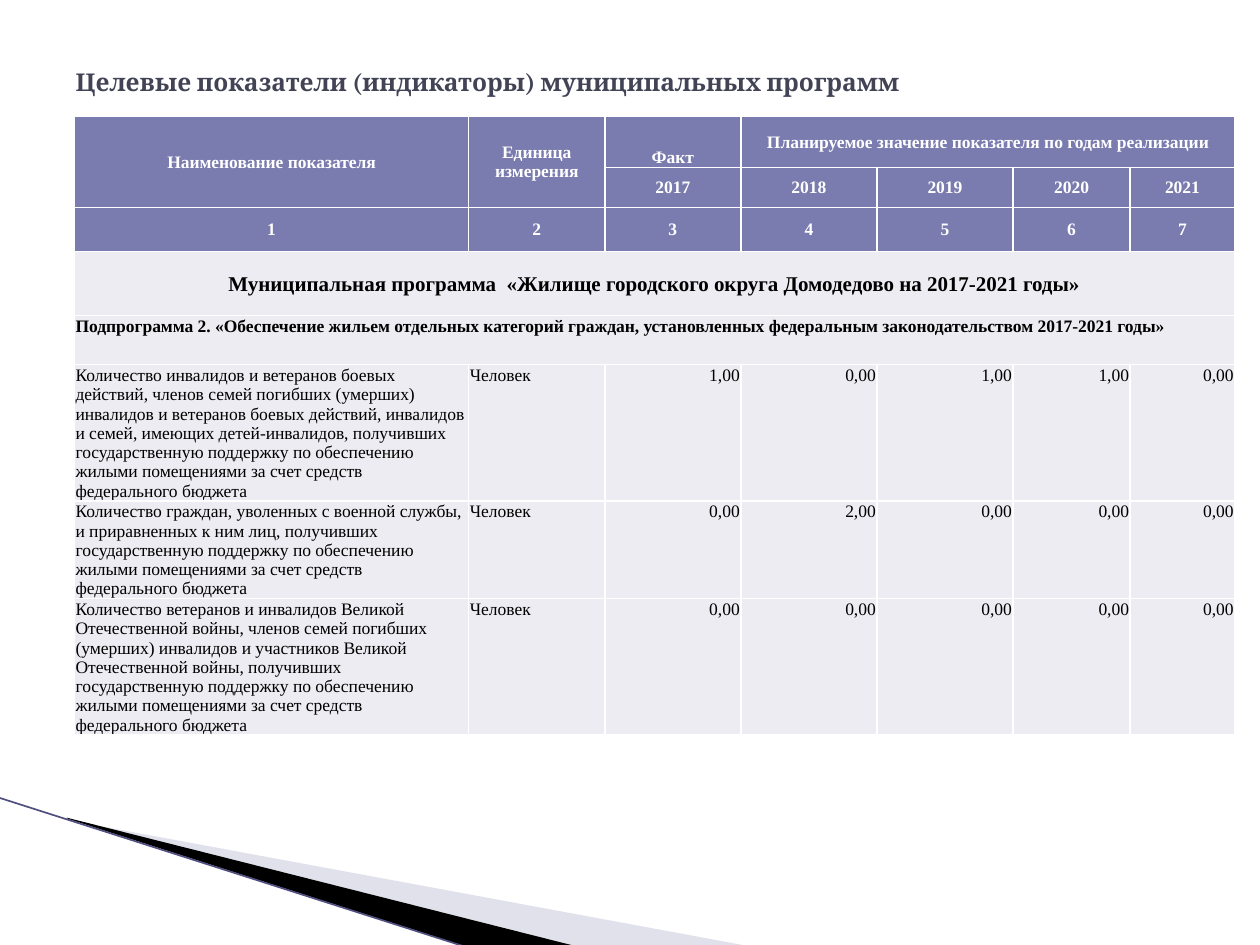
from lxml import etree
from pptx import Presentation
from pptx.dml.color import RGBColor
from pptx.enum.shapes import MSO_CONNECTOR
from pptx.enum.text import MSO_ANCHOR, PP_ALIGN
from pptx.oxml.ns import qn
from pptx.util import Pt

LEFT, MID, RIGHT = PP_ALIGN.LEFT, PP_ALIGN.CENTER, PP_ALIGN.RIGHT
TOP, CENTER, BOTTOM = MSO_ANCHOR.TOP, MSO_ANCHOR.MIDDLE, MSO_ANCHOR.BOTTOM
STRAIGHT = MSO_CONNECTOR.STRAIGHT

COLORS = {
    "title": "424456", "head": "7A7BAE", "body": "ECECF2", "white": "FFFFFF",
    "black": "000000", "wedge": "B6B6D1", "edge": "504F80",
}
SERIF = "Times New Roman"

COLS = [225.36, 77.76, 77.76, 77.76, 77.76, 66.96, 59.76]
ROWS = [29.5, 20.9, 25.2, 36.7, 28.1, 18.7, 29.5, 29.5]
HEADS = 3
AID = ("получивших государственную поддержку по обеспечению жилыми "
       "помещениями за счет средств федерального бюджета")
UNIT = "Человек"
DATA = [
    ["Наименование показателя", "Единица измерения", "Факт",
     "Планируемое значение показателя по годам реализации", "", "", ""],
    ["", "", "2017", "2018", "2019", "2020", "2021"],
    ["1", "2", "3", "4", "5", "6", "7"],
    ["Муниципальная программа  «Жилище городского округа Домодедово "
     "на 2017-2021 годы»"] + [""] * 6,
    ["Подпрограмма 2. «Обеспечение жильем отдельных категорий граждан, "
     "установленных федеральным законодательством 2017-2021 годы»"] + [""] * 6,
    ["Количество инвалидов и ветеранов боевых действий, членов семей погибших "
     "(умерших) инвалидов и ветеранов боевых действий, инвалидов и семей, "
     "имеющих детей-инвалидов, " + AID,
     UNIT, "1,00", "0,00", "1,00", "1,00", "0,00"],
    ["Количество граждан, уволенных с военной службы, и приравненных к ним "
     "лиц, " + AID, UNIT, "0,00", "2,00", "0,00", "0,00", "0,00"],
    ["Количество ветеранов и инвалидов Великой Отечественной войны, членов "
     "семей погибших (умерших) инвалидов и участников Великой Отечественной "
     "войны, " + AID, UNIT, "0,00", "0,00", "0,00", "0,00", "0,00"],
]
# First and last cell of each merged area
SPANS = [((0, 0), (1, 0)), ((0, 1), (1, 1)), ((0, 3), (0, 6)),
         ((3, 0), (3, 6)), ((4, 0), (4, 6))]


def rgb(name):
    return RGBColor.from_string(COLORS[name])


def style(para, face, size, color, bold):
    for run in para.runs:
        run.font.name = face
        run.font.size = Pt(size)
        run.font.bold = bold
        run.font.color.rgb = rgb(color)


def add_wedge(slide, points, color, alpha=100):
    spots = [(Pt(x), Pt(y)) for x, y in points]
    form = slide.shapes.build_freeform(*spots[0])
    form.add_line_segments(spots[1:], close=True)
    shape = form.convert_to_shape()
    shape.shadow.inherit = False
    shape.line.fill.background()
    shape.fill.solid()
    shape.fill.fore_color.rgb = rgb(color)
    if alpha < 100:
        tint = shape.fill._xPr.find(".//" + qn("a:srgbClr"))
        etree.SubElement(tint, qn("a:alpha"), val=str(alpha * 1000))


def add_corner(slide, top, base):
    """Fan of two wedges and an edge in the lower left corner."""
    add_wedge(slide, [(39.6, top + 13), (428.4, base), (328.3, base),
                      (39.6, top + 12.2)], "wedge", 40)
    add_wedge(slide, [(38.2, top + 11.5), (329, base), (267.8, base + 0.7),
                      (38.9, top + 12.2)], "black")
    line = slide.shapes.add_connector(STRAIGHT, Pt(-0.7), Pt(top),
                                      Pt(267.1), Pt(base + 0.7))
    line.line.color.rgb = rgb("edge")
    line.line.width = Pt(0.95)
    etree.SubElement(line._element.spPr, qn("a:effectLst"))


def add_title(slide, x, y, w, h):
    title = slide.shapes.title
    title.left, title.top, title.width, title.height = map(Pt, (x, y, w, h))
    frame = title.text_frame
    frame.text = "Целевые показатели (индикаторы) муниципальных программ"
    frame.word_wrap = True
    frame.vertical_anchor = CENTER
    frame.paragraphs[0].alignment = LEFT
    style(frame.paragraphs[0], "Cambria", 14, "title", True)


def add_border(cell):
    props = cell._tc.get_or_add_tcPr()
    for spot, side in enumerate(("lnL", "lnR", "lnT", "lnB")):
        line = etree.Element(qn("a:" + side), w=str(Pt(1)))
        fill = etree.SubElement(line, qn("a:solidFill"))
        etree.SubElement(fill, qn("a:srgbClr"), val=COLORS["white"])
        props.insert(spot, line)


def fill_cell(cell, text, row, col):
    head = row < HEADS
    cell.fill.solid()
    cell.fill.fore_color.rgb = rgb("head" if head else "body")
    add_border(cell)
    cell.margin_left = cell.margin_right = cell.margin_top = Pt(0.7)
    cell.margin_bottom = Pt(0)
    cell.vertical_anchor = CENTER if row <= HEADS else TOP
    if text == "Факт":
        cell.vertical_anchor = BOTTOM
    if not text:
        return
    cell.text_frame.text = text
    para = cell.text_frame.paragraphs[0]
    if row <= HEADS:
        para.alignment = MID
    else:
        para.alignment = RIGHT if col > 1 else LEFT
    style(para, SERIF, 12 if row == HEADS else 10,
          "white" if head else "black", row <= HEADS + 1)


def add_grid(slide, x, y, w, h):
    frame = slide.shapes.add_table(len(ROWS), len(COLS),
                                   Pt(x), Pt(y), Pt(w), Pt(h))
    table = frame.table
    table.first_row = table.horz_banding = False
    for col, width in zip(table.columns, COLS):
        col.width = Pt(width)
    for row, height in zip(table.rows, ROWS):
        row.height = Pt(height)
    frame.height = Pt(h)
    for i, row in enumerate(DATA):
        for j, text in enumerate(row):
            fill_cell(table.cell(i, j), text, i, j)
    for first, last in SPANS:
        table.cell(*first).merge(table.cell(*last))


def main():
    deck = Presentation()
    deck.slide_width, deck.slide_height = Pt(720), Pt(540)
    slide = deck.slides.add_slide(deck.slide_layouts[5])
    add_corner(slide, 455.8, 540.7)
    add_title(slide, 36, 21.6, 648, 49.7)
    add_grid(slide, 42.5, 66.2, 663.1, 370.8)
    deck.save("out.pptx")


if __name__ == "__main__":
    main()
